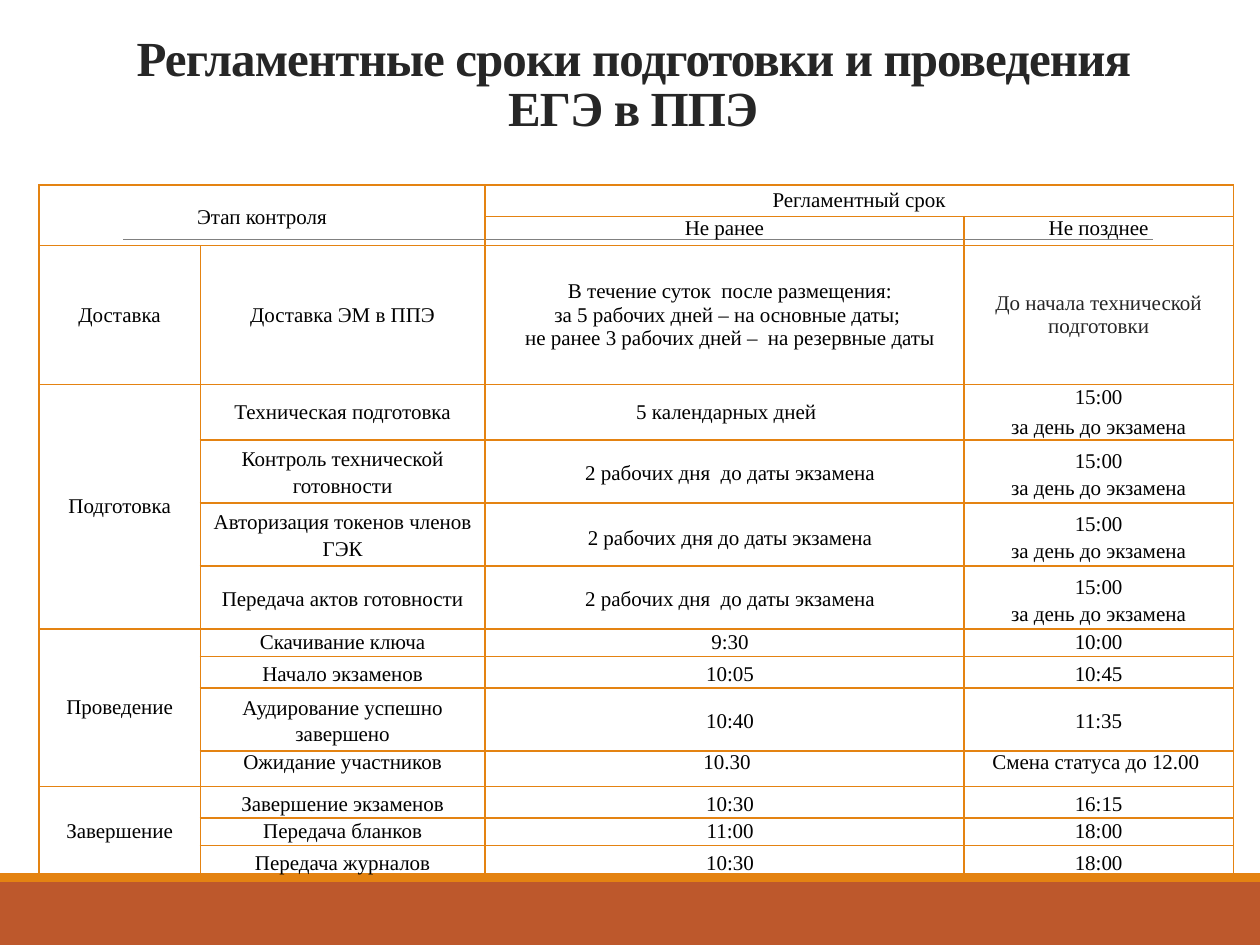
from collections import namedtuple
from dataclasses import dataclass
from itertools import product

from lxml import etree
from pptx import Presentation
from pptx import util as u
from pptx.dml.color import RGBColor
from pptx.enum import shapes, text
from pptx.oxml.ns import qn

COLUMNS, ROWS = 100, 75
UNIT = u.Inches(0.1)

Box = namedtuple("Box", "left top width height")
Line = namedtuple("Line", "text spacing before", defaults=(1.0, 0))
Stage = namedtuple("Stage", "name steps")
Step = namedtuple("Step", "name earliest latest height indent", defaults=(0.9,))


@dataclass(frozen=True)
class Theme:
    font: str = "Times New Roman"
    title_size: float = 28
    table_size: float = 12
    ink: str = "000000"
    soft_ink: str = "262626"
    rule: str = "808080"
    band: str = "BD582C"
    accent: str = "E48312"


THEME = Theme()


def loose(words):
    return Line(words, 1.15)


def loose_step(name, earliest, latest, height):
    return Step(loose(name), loose(earliest), [loose(latest)], height)


def spaced_step(name, earliest, latest, before):
    return Step(*(Line(name, 1.0, before), Line(earliest, 1.0, before)),
                [Line(latest, 1.0, before)], 2.2)


def day_before(first, second):
    return [first._replace(text="15:00"), second._replace(text="за день до экзамена")]


DEADLINE = day_before(Line("", u.Pt(17.6)), loose(""))
COLUMN_WIDTHS = (12.8, 22.6, 38, 21.4)
HEADER_HEIGHTS = (2.5, 2.2)
STAGES = [
    Stage(Line("Доставка"), [
        Step(Line("Доставка ЭМ в ППЭ"),
             Line("В течение суток  после размещения:\n"
                  "за 5 рабочих дней – на основные даты; \n"
                  "не ранее 3 рабочих дней –  на резервные даты", 1.0, 3),
             [Line("До начала технической подготовки")], 11),
    ]),
    Stage(Line("Подготовка"), [
        Step(Line("Техническая подготовка", 1.0, 8.8), Line("5 календарных дней"),
             day_before(Line("", 1.0, 0.2), Line("", u.Pt(17.4))), 4.2, 0.3),
        Step(loose("Контроль технической готовности"),
             loose("2 рабочих дня  до даты экзамена"), DEADLINE, 5),
        Step(loose("Авторизация токенов членов ГЭК"),
             Line("2 рабочих дня до даты экзамена", u.Pt(17.5)), DEADLINE, 5),
        Step(loose("Передача актов готовности"),
             loose("2 рабочих дня  до даты экзамена"), DEADLINE, 5),
    ]),
    Stage(Line("Проведение", 1.0, 9.8), [
        spaced_step("Скачивание ключа", "9:30", "10:00", 5),
        loose_step("Начало экзаменов", "10:05", "10:45", 2.5),
        loose_step("Аудирование успешно завершено", "10:40", "11:35", 5),
        Step(Line("Ожидание участников"), Line(" 10.30"),
             [Line("Смена статуса до 12.00 ")], 2.8, 0),
    ]),
    Stage(Line("Завершение"), [
        loose_step("Завершение экзаменов", "10:30", "16:15", 2.5),
        spaced_step("Передача бланков", "11:00", "18:00", 5.1),
        loose_step("Передача журналов", "10:30", "18:00", 2.5),
    ]),
]


def grid(units):
    return u.Emu(round(units * UNIT))


def place(box):
    return [grid(side) for side in box]


def rgb(value):
    return RGBColor.from_string(value)


def write_line(paragraph, line, size, color, bold=False, tracking=None):
    paragraph.alignment = text.PP_ALIGN.CENTER
    paragraph.line_spacing = line.spacing
    paragraph.space_before = u.Pt(line.before)
    for index, part in enumerate(line.text.split("\n")):
        if index:
            paragraph.add_line_break()
        run = paragraph.add_run()
        run.text = part
        run.font.name = THEME.font
        run.font.size = u.Pt(size)
        run.font.bold = bold
        run.font.color.rgb = rgb(color)
        if tracking is not None:
            run.font._element.set("spc", str(round(tracking * 100)))


def frame_cell(cell):
    """Give a cell the accent border, no fill and tight margins."""
    properties = cell._tc.get_or_add_tcPr()
    for side in ("lnL", "lnR", "lnT", "lnB"):
        border = etree.SubElement(properties, qn(f"a:{side}"), w=str(u.Pt(1)))
        fill = etree.SubElement(border, qn("a:solidFill"))
        etree.SubElement(fill, qn("a:srgbClr"), val=THEME.accent)
    cell.fill.background()
    cell.margin_left = cell.margin_right = grid(0.5)
    cell.margin_top = cell.margin_bottom = 0


def fill_cell(cell, lines, indent=0, color=THEME.ink, middle=True):
    anchors = text.MSO_ANCHOR
    cell.vertical_anchor = anchors.MIDDLE if middle else anchors.TOP
    for index, line in enumerate(lines):
        frame = cell.text_frame
        paragraph = frame.add_paragraph() if index else frame.paragraphs[0]
        write_line(paragraph, line, THEME.table_size, color)
        if indent:
            paragraph._p.get_or_add_pPr().set("marL", str(grid(indent)))


def add_header(table):
    table.cell(0, 0).merge(table.cell(1, 1))
    table.cell(0, 2).merge(table.cell(0, 3))
    fill_cell(table.cell(0, 0), [loose("Этап контроля")])
    fill_cell(table.cell(0, 2), [loose("Регламентный срок")], middle=False)
    for column, limit in enumerate(("Не ранее", "Не позднее"), 2):
        fill_cell(table.cell(1, column), [Line(limit, 1.0, 0.5)], middle=False)


def add_stage(table, top, stage):
    """Fill the rows of one stage from row top; return the next free row."""
    end = top + len(stage.steps)
    if len(stage.steps) > 1:
        table.cell(top, 0).merge(table.cell(end - 1, 0))
    fill_cell(table.cell(top, 0), [stage.name])
    for row, step in enumerate(stage.steps, top):
        middle = step.indent > 0
        color = THEME.soft_ink if stage.name.text == "Доставка" else THEME.ink
        fill_cell(table.cell(row, 1), [step.name], middle=middle)
        fill_cell(table.cell(row, 2), [step.earliest], step.indent, middle=middle)
        fill_cell(table.cell(row, 3), step.latest, color=color, middle=middle)
    return end


def add_schedule(slide, box):
    heights = [*HEADER_HEIGHTS, *(step.height for stage in STAGES for step in stage.steps)]
    table = slide.shapes.add_table(len(heights), len(COLUMN_WIDTHS), *place(box)).table
    table.first_row = table.horz_banding = False
    for column, width in zip(table.columns, COLUMN_WIDTHS):
        column.width = grid(width)
    for row, height in zip(table.rows, heights):
        row.height = grid(height)
    for row, column in product(range(len(heights)), range(len(COLUMN_WIDTHS))):
        frame_cell(table.cell(row, column))
    add_header(table)
    row = len(HEADER_HEIGHTS)
    for stage in STAGES:
        row = add_stage(table, row, stage)
    for cell in table.iter_cells():
        if cell.is_spanned:
            etree.SubElement(cell.text_frame.paragraphs[0]._p, qn("a:endParaRPr"),
                             sz=str(THEME.table_size * 100))


def add_title(slide, box):
    frame = slide.shapes.add_textbox(*place(box)).text_frame
    frame.word_wrap = True
    frame.vertical_anchor = text.MSO_ANCHOR.BOTTOM
    title = Line("Регламентные сроки подготовки и проведения ЕГЭ в ППЭ", 0.85)
    write_line(frame.paragraphs[0], title, THEME.title_size, THEME.soft_ink, True, -0.5)


def add_footer(slide, box):
    edge = 0.7
    strips = ((box._replace(top=box.top + edge, height=box.height - edge), THEME.band),
              (box._replace(height=edge), THEME.accent))
    for strip, color in strips:
        bar = slide.shapes.add_shape(shapes.MSO_SHAPE.RECTANGLE, *place(strip))
        bar.shadow.inherit = False
        bar.fill.solid()
        bar.fill.fore_color.rgb = rgb(color)
        bar.line.fill.background()


def add_rule(slide, box):
    left, top, width, _ = place(box)
    rule = slide.shapes.add_connector(shapes.MSO_CONNECTOR.STRAIGHT,
                                      left, top, left + width, top)
    rule.line.color.rgb = rgb(THEME.rule)
    rule.line.width = u.Pt(0.5)
    etree.SubElement(rule._element.spPr, qn("a:effectLst"))


def main():
    deck = Presentation()
    deck.slide_width, deck.slide_height = grid(COLUMNS), grid(ROWS)
    slide = deck.slides.add_slide(deck.slide_layouts[6])
    add_footer(slide, Box(0, 69.3, COLUMNS, 5.7))
    add_rule(slide, Box(9.8, 19, 81.7, 0))
    add_title(slide, Box(9, 2.3, 82.5, 9))
    add_schedule(slide, Box(3.1, 14.7, sum(COLUMN_WIDTHS), 54.8))
    deck.save("out.pptx")


if __name__ == "__main__":
    main()
